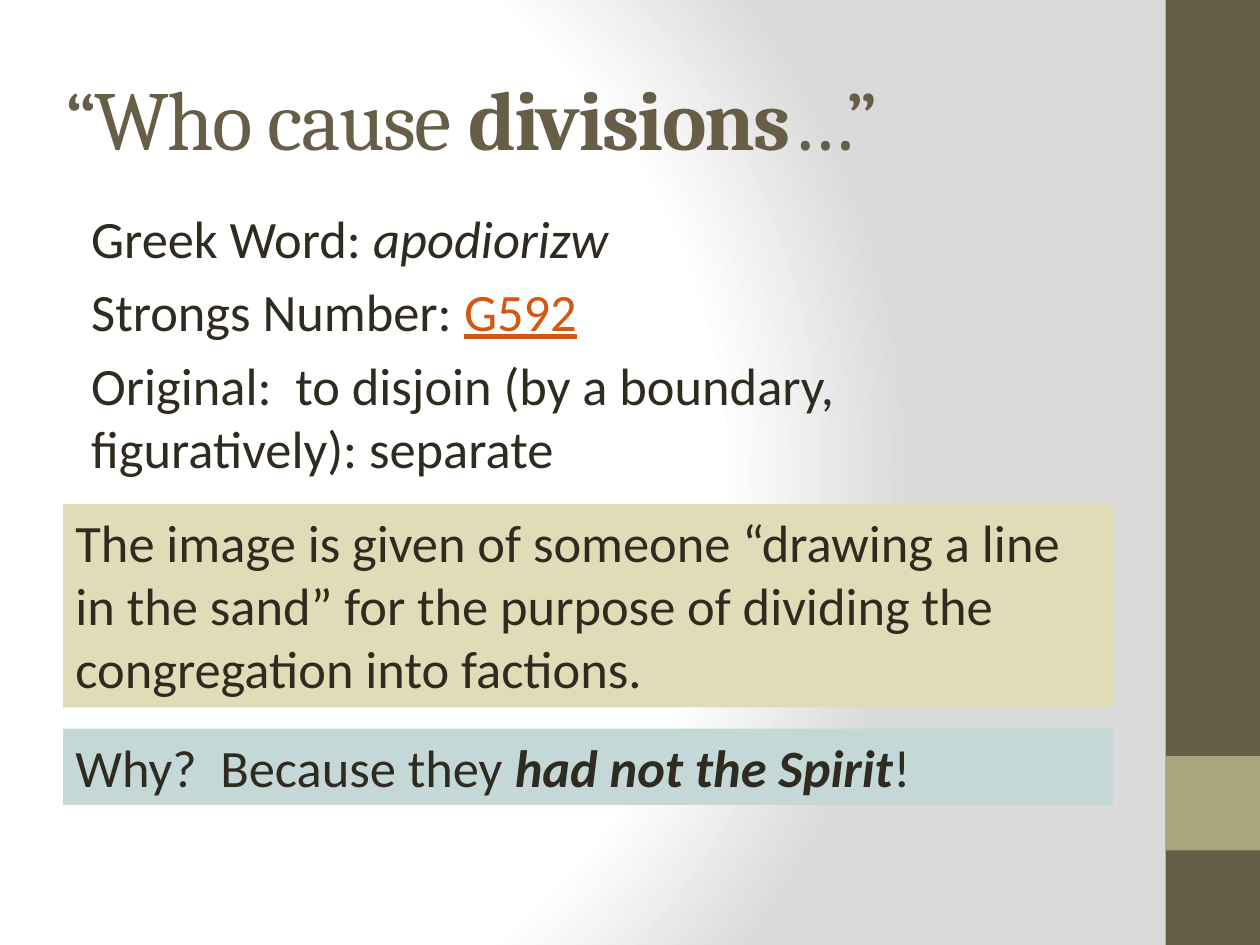
from dataclasses import dataclass

from lxml import etree
from pptx import Presentation
from pptx.dml.color import RGBColor
from pptx.enum.shapes import MSO_SHAPE
from pptx.enum.text import MSO_ANCHOR, MSO_AUTO_SIZE, PP_ALIGN
from pptx.oxml.ns import nsdecls, qn
from pptx.slide import Slide
from pptx.text.text import TextFrame, _Paragraph
from pptx.util import Pt

COLORS = {
    "white": "FFFFFF",
    "gray": "DADADA",
    "olive": "675E47",
    "sage": "A9A57C",
    "text": "2F2B20",
    "link": "D25814",
    "sand": "DFDCB7",
    "mist": "C4D8D7",
}


@dataclass(frozen=True)
class Box:
    left: float
    top: float
    width: float
    height: float

    def lengths(self) -> tuple:
        return Pt(self.left), Pt(self.top), Pt(self.width), Pt(self.height)


@dataclass(frozen=True)
class Piece:
    text: str
    bold: bool = False
    italic: bool = False
    link: bool = False


@dataclass(frozen=True)
class Callout:
    box: Box
    fill: str
    pieces: tuple[Piece, ...]


TITLE_BOX = Box(30, 21.6, 606, 90)
TITLE = (Piece("“Who cause "), Piece("divisions", bold=True), Piece("…”"))

BODY_BOX = Box(36, 114, 600, 180)
BODY = (
    (Piece("Greek Word: "), Piece("apodiorizw", italic=True)),
    (Piece("Strongs Number: "), Piece("G592", link=True)),
    (Piece("Original:  to disjoin (by a boundary, figuratively): separate"),),
)

SIDEBAR = (
    (Box(666, 0, 54, 540), "olive"),
    (Box(666, 432, 54, 54), "sage"),
)

CALLOUTS = (
    Callout(Box(36, 288, 600, 116.3), "sand", (
        Piece("The image is given of someone “drawing a line in the sand” "
              "for the purpose of dividing the congregation into factions."),
    )),
    Callout(Box(36, 416.4, 600, 43.6), "mist", (
        Piece("Why?  Because they "),
        Piece("had not the Spirit", bold=True, italic=True),
        Piece("!"),
    )),
)


def color(name: str) -> RGBColor:
    return RGBColor.from_string(COLORS[name])


def set_background(slide: Slide) -> None:
    """Radial gradient that stays white until three quarters of the way out."""
    slide.background.fill.solid()
    properties = slide.element.find(".//" + qn("p:bgPr"))
    stops = "".join(
        f'<a:gs pos="{position * 1000}"><a:srgbClr val="{COLORS[name]}"/></a:gs>'
        for position, name in ((0, "white"), (75, "white"), (100, "gray"))
    )
    gradient = etree.fromstring(
        f'<a:gradFill {nsdecls("a")} rotWithShape="1"><a:gsLst>{stops}</a:gsLst>'
        '<a:path path="circle">'
        '<a:fillToRect l="20000" t="50000" r="100000" b="50000"/>'
        "</a:path></a:gradFill>"
    )
    properties.replace(properties.find(qn("a:solidFill")), gradient)


def write_pieces(paragraph: _Paragraph, pieces: tuple[Piece, ...],
                 font_name: str = "Calibri", size: float = 30,
                 font_color: str = "text") -> None:
    paragraph.alignment = PP_ALIGN.LEFT
    paragraph.font.name = font_name
    paragraph.font.size = Pt(size)
    paragraph.font.color.rgb = color(font_color)
    for piece in pieces:
        run = paragraph.add_run()
        run.text = piece.text
        run.font.name = font_name
        run.font.size = Pt(size)
        run.font.bold = piece.bold
        run.font.italic = piece.italic
        run.font.underline = piece.link
        run.font.color.rgb = color("link" if piece.link else font_color)


def prepare_frame(frame: TextFrame, anchor: MSO_ANCHOR) -> None:
    frame.word_wrap = True
    frame.auto_size = MSO_AUTO_SIZE.NONE
    frame.vertical_anchor = anchor


def add_panel(slide: Slide, box: Box, fill: str) -> TextFrame:
    shape = slide.shapes.add_shape(MSO_SHAPE.RECTANGLE, *box.lengths())
    shape.shadow.inherit = False
    shape.fill.solid()
    shape.fill.fore_color.rgb = color(fill)
    shape.line.fill.background()
    return shape.text_frame


def format_title(slide: Slide) -> None:
    title = slide.shapes.title
    title.left, title.top, title.width, title.height = TITLE_BOX.lengths()
    prepare_frame(title.text_frame, MSO_ANCHOR.MIDDLE)
    paragraph = title.text_frame.paragraphs[0]
    write_pieces(paragraph, TITLE, "Cambria", 48, "olive")
    # Letter spacing of minus one point
    for run in paragraph.runs:
        run.font._element.set("spc", "-100")


def add_body(slide: Slide) -> None:
    frame = slide.shapes.add_textbox(*BODY_BOX.lengths()).text_frame
    prepare_frame(frame, MSO_ANCHOR.TOP)
    for index, pieces in enumerate(BODY):
        paragraph = frame.add_paragraph() if index else frame.paragraphs[0]
        write_pieces(paragraph, pieces)
        paragraph.space_before = Pt(6)
        paragraph._p.get_or_add_pPr().set("marL", str(Pt(9)))


def add_callout(slide: Slide, callout: Callout) -> None:
    frame = add_panel(slide, callout.box, callout.fill)
    prepare_frame(frame, MSO_ANCHOR.TOP)
    write_pieces(frame.paragraphs[0], callout.pieces)


def main() -> None:
    presentation = Presentation()
    presentation.slide_width, presentation.slide_height = Pt(720), Pt(540)
    slide = presentation.slides.add_slide(presentation.slide_layouts[5])

    # Backdrop and right-hand sidebar
    set_background(slide)
    for box, fill in SIDEBAR:
        add_panel(slide, box, fill)

    # Title, word study and callouts
    format_title(slide)
    add_body(slide)
    for callout in CALLOUTS:
        add_callout(slide, callout)

    presentation.save("out.pptx")


if __name__ == "__main__":
    main()
